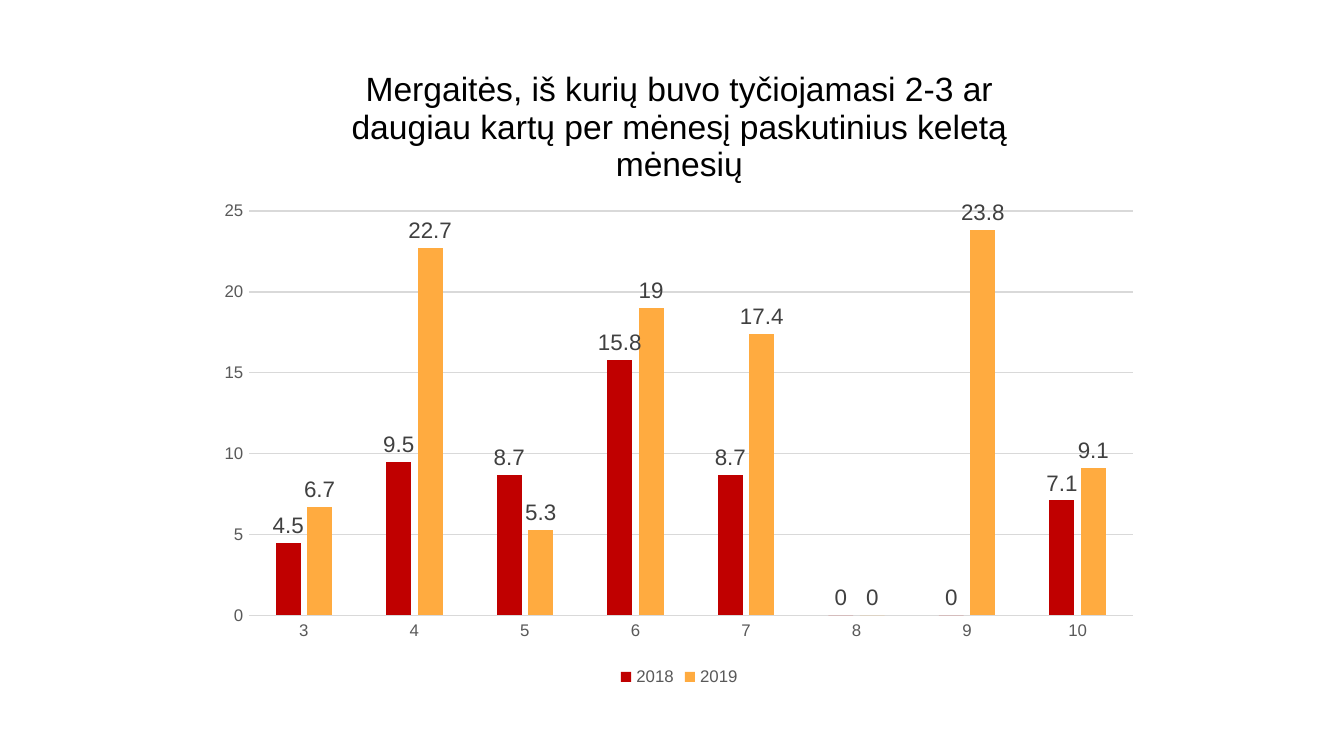
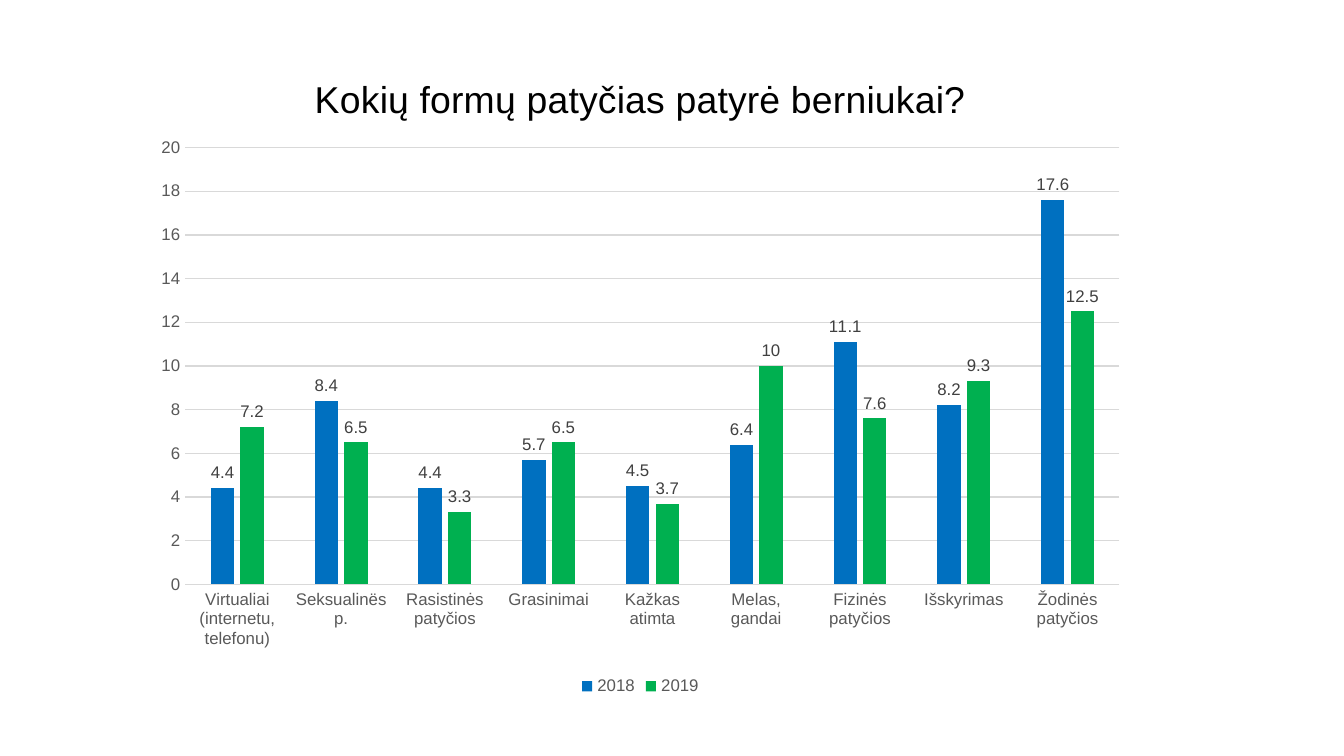
from dataclasses import dataclass

from lxml import etree
from pptx import Presentation
from pptx.chart.chart import Chart
from pptx.chart.data import CategoryChartData
from pptx.dml.color import RGBColor
from pptx.enum.chart import XL_CHART_TYPE, XL_LABEL_POSITION, XL_LEGEND_POSITION, XL_TICK_MARK
from pptx.oxml.ns import qn
from pptx.util import Inches, Pt

COLUMNS = XL_CHART_TYPE.COLUMN_CLUSTERED
OUTSIDE_END = XL_LABEL_POSITION.OUTSIDE_END
BOTTOM = XL_LEGEND_POSITION.BOTTOM
NO_TICK = XL_TICK_MARK.NONE

FONT = "Arial"
BLACK, DARK_GREY, GREY, LIGHT_GREY = "000000", "404040", "595959", "D9D9D9"
AXIS_SIZE = 9
BLANK_LAYOUT = 6

Box = tuple[float, float, float, float]  # left, top, width, height in inches


@dataclass
class YearSeries:
    name: str
    values: list[float]
    color: str


@dataclass
class ChartSlide:
    title: str
    title_size: int
    box: Box
    plot_box: Box  # measured from the chart's corner
    categories: list[str]
    years: list[YearSeries]
    label_size: int
    axis_max: int
    axis_step: int


CHART_SLIDES = [
    ChartSlide(
        title="Mergaitės, iš kurių buvo tyčiojamasi 2-3 ar daugiau kartų "
              "per mėnesį paskutinius keletą mėnesių",
        title_size=18,
        box=(1.53, 0.3, 7.05, 4.85),
        plot_box=(0.32, 1.27, 6.58, 3.01),
        categories=[str(grade) for grade in range(3, 11)],
        years=[
            YearSeries("2018", [4.5, 9.5, 8.7, 15.8, 8.7, 0, 0, 7.1], "C00000"),
            YearSeries("2019", [6.7, 22.7, 5.3, 19, 17.4, 0, 23.8, 9.1], "FFAB40"),
        ],
        label_size=12, axis_max=25, axis_step=5,
    ),
    ChartSlide(
        title="Kokių formų patyčias patyrė berniukai?",
        title_size=20,
        box=(1.05, 0.36, 7.43, 4.86),
        plot_box=(0.33, 0.74, 6.95, 3.25),
        categories=["Virtualiai (internetu, telefonu)", "Seksualinës p.",
                    "Rasistinės patyčios", "Grasinimai", "Kažkas atimta",
                    "Melas, gandai", "Fizinės patyčios", "Išskyrimas",
                    "Žodinės patyčios"],
        years=[
            YearSeries("2018", [4.4, 8.4, 4.4, 5.7, 4.5, 6.4, 11.1, 8.2, 17.6], "0070C0"),
            YearSeries("2019", [7.2, 6.5, 3.3, 6.5, 3.7, 10, 7.6, 9.3, 12.5], "00B050"),
        ],
        label_size=9, axis_max=20, axis_step=2,
    ),
]


def rgb(value: str) -> RGBColor:
    return RGBColor.from_string(value)


def set_font(font, size: int, color: str = GREY) -> None:
    font.name = FONT
    font.size = Pt(size)
    font.bold = False
    font.color.rgb = rgb(color)


def set_line(line, color: str = LIGHT_GREY) -> None:
    line.color.rgb = rgb(color)
    line.width = Pt(0.75)


def set_text(tf, text: str, *, size: int, color: str) -> None:
    p = tf.paragraphs[0]
    r = p.add_run()
    r.text = text
    set_font(r.font, size, color)


def place_plot(chart: Chart, box: Box, plot_box: Box) -> None:
    """Fix the inner plot area as fractions of the chart's size."""
    plot_area = chart.element.find(".//" + qn("c:plotArea"))
    for old in plot_area.findall(qn("c:layout")):
        plot_area.remove(old)
    layout = etree.Element(qn("c:layout"))
    manual = etree.SubElement(layout, qn("c:manualLayout"))
    width, height = box[2:]
    settings = [("layoutTarget", "inner"), ("xMode", "edge"), ("yMode", "edge")]
    settings += [(tag, length / whole) for tag, length, whole
                 in zip("xywh", plot_box, (width, height) * 2)]
    for tag, value in settings:
        etree.SubElement(manual, qn(f"c:{tag}")).set("val", str(value))
    plot_area.insert(0, layout)


def format_axes(chart: Chart, maximum: int, step: int) -> None:
    for axis in (chart.category_axis, chart.value_axis):
        axis.major_tick_mark = axis.minor_tick_mark = NO_TICK
        set_font(axis.tick_labels.font, AXIS_SIZE)
    set_line(chart.category_axis.format.line)
    axis = chart.value_axis
    axis.format.line.fill.background()
    axis.minimum_scale, axis.maximum_scale = 0, maximum
    axis.major_unit = step
    axis.has_major_gridlines = True
    set_line(axis.major_gridlines.format.line)


def format_columns(chart: Chart, years: list[YearSeries], label_size: int) -> None:
    plot = chart.plots[0]
    plot.gap_width, plot.overlap = 219, -27
    plot.vary_by_categories = False
    for series, year in zip(plot.series, years):
        series.format.fill.solid()
        series.format.fill.fore_color.rgb = rgb(year.color)
        labels = series.data_labels
        labels.show_value = True
        labels.position = OUTSIDE_END
        set_font(labels.font, label_size, DARK_GREY)


def add_chart_slide(prs, content: ChartSlide) -> None:
    s = prs.slides.add_slide(prs.slide_layouts[BLANK_LAYOUT])
    data = CategoryChartData()
    data.categories = content.categories
    for year in content.years:
        data.add_series(year.name, year.values)
    lengths = [Inches(length) for length in content.box]
    chart = s.shapes.add_chart(COLUMNS, *lengths, data).chart

    set_font(chart.font, 10, BLACK)
    chart.has_title = True
    set_text(chart.chart_title.text_frame, content.title,
             size=content.title_size, color=BLACK)
    chart.chart_title.include_in_layout = False
    chart.has_legend = True
    chart.legend.position = BOTTOM
    chart.legend.include_in_layout = False
    set_font(chart.legend.font, AXIS_SIZE)

    format_axes(chart, content.axis_max, content.axis_step)
    format_columns(chart, content.years, content.label_size)
    place_plot(chart, content.box, content.plot_box)


def main() -> None:
    prs = Presentation()
    prs.slide_width = Inches(10)
    prs.slide_height = prs.slide_width * 9 // 16
    for chart_slide in CHART_SLIDES:
        add_chart_slide(prs, chart_slide)
    prs.save("out.pptx")


if __name__ == "__main__":
    main()
